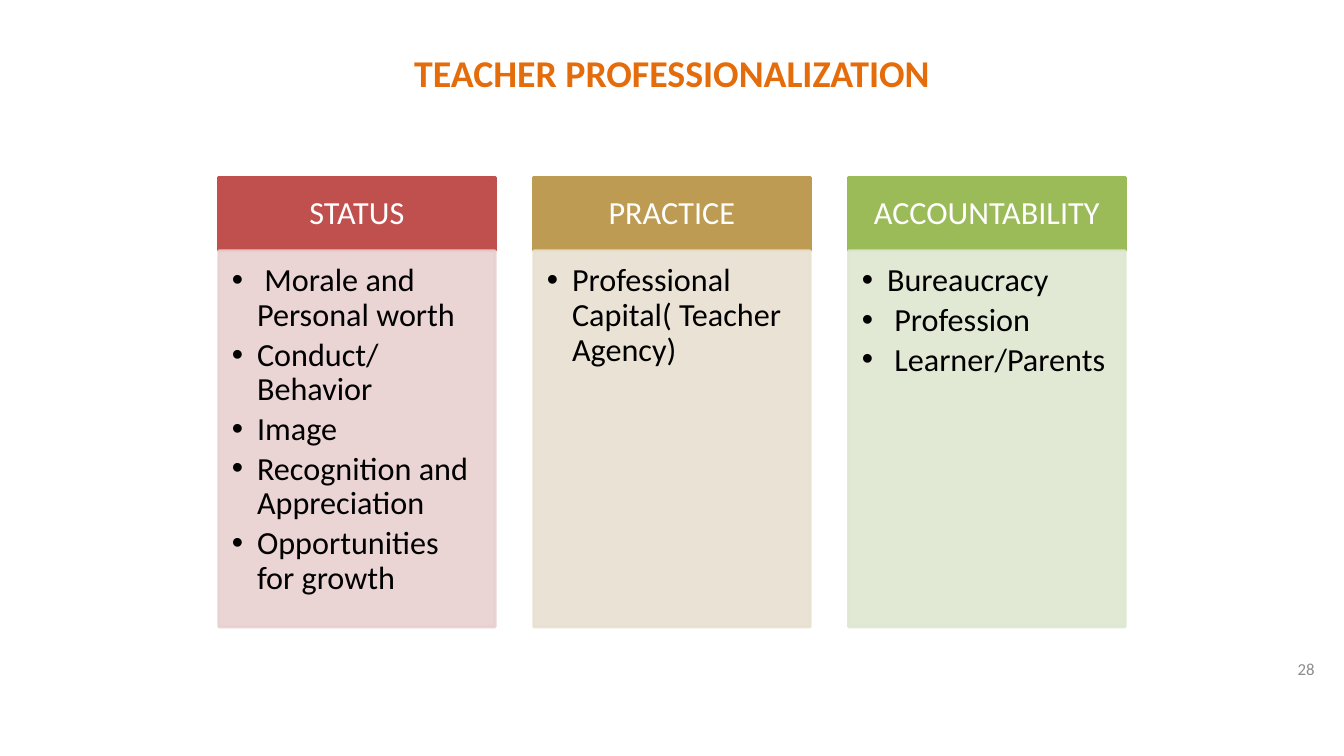
from lxml.etree import SubElement
from pptx import Presentation
from pptx.dml.color import RGBColor
from pptx.enum.shapes import MSO_SHAPE
from pptx.enum.text import MSO_ANCHOR, PP_ALIGN
from pptx.oxml.ns import qn
from pptx.util import Pt

ORANGE = RGBColor(0xE4, 0x6C, 0x0A)
WHITE = RGBColor(0xFF, 0xFF, 0xFF)
BLACK = RGBColor(0x00, 0x00, 0x00)
GRAY = RGBColor(0x8C, 0x8C, 0x8C)
RED = RGBColor(0xC0, 0x50, 0x4D)
PALE_RED = RGBColor(0xE8, 0xD0, 0xD0)
TAN = RGBColor(0xBD, 0x9B, 0x53)
PALE_TAN = RGBColor(0xE8, 0xE1, 0xD1)
GREEN = RGBColor(0x9B, 0xBB, 0x59)
PALE_GREEN = RGBColor(0xDE, 0xE7, 0xD1)

FONT = "Calibri"
HEADER_HEIGHT = 52.3
COLUMN_GAP = 27.5
BULLET_INDENT = 18
COLUMNS = [
    ("STATUS", RED, PALE_RED,
     [" Morale and Personal worth", "Conduct/ Behavior", "Image",
      "Recognition and Appreciation", "Opportunities for growth"]),
    ("PRACTICE", TAN, PALE_TAN, ["Professional Capital( Teacher Agency)"]),
    ("ACCOUNTABILITY", GREEN, PALE_GREEN,
     ["Bureaucracy", " Profession", " Learner/Parents"]),
]


def add_bullet(paragraph):
    properties = paragraph._p.get_or_add_pPr()
    properties.set("marL", str(Pt(BULLET_INDENT)))
    properties.set("indent", str(-Pt(BULLET_INDENT)))
    SubElement(properties, qn("a:buFont"), typeface="Arial")
    SubElement(properties, qn("a:buChar"), char="•")


def write_text(shape, lines, *, size, color, bold=False, align=PP_ALIGN.LEFT,
               anchor=MSO_ANCHOR.TOP, margins=(7.2, 3.6, 7.2, 3.6),
               line_spacing=1.0, space_after=0, bullets=False):
    frame = shape.text_frame
    frame.word_wrap = True
    frame.vertical_anchor = anchor
    (frame.margin_left, frame.margin_top,
     frame.margin_right, frame.margin_bottom) = [Pt(margin) for margin in margins]
    for index, line in enumerate(lines):
        paragraph = frame.paragraphs[0] if index == 0 else frame.add_paragraph()
        paragraph.alignment = align
        paragraph.line_spacing = line_spacing
        paragraph.space_after = Pt(space_after)
        if bullets:
            add_bullet(paragraph)
        run = paragraph.add_run()
        run.text = line
        run.font.name = FONT
        run.font.size = Pt(size)
        run.font.bold = bold
        run.font.color.rgb = color


def add_text_box(slide, text, left, top, width, height, **text_format):
    box = slide.shapes.add_textbox(Pt(left), Pt(top), Pt(width), Pt(height))
    write_text(box, [text], **text_format)


def add_panel(slide, left, top, width, height, color, opacity=100):
    panel = slide.shapes.add_shape(
        MSO_SHAPE.RECTANGLE, Pt(left), Pt(top), Pt(width), Pt(height))
    panel.shadow.inherit = False
    panel.fill.solid()
    panel.fill.fore_color.rgb = color
    panel.line.color.rgb = color
    panel.line.width = Pt(2)
    if opacity < 100:
        for color_element in panel._element.spPr.iter(qn("a:srgbClr")):
            SubElement(color_element, qn("a:alpha"), val=str(opacity * 1000))
    return panel


def add_column(slide, left, top, width, height, heading, color, pale_color, items):
    header = add_panel(slide, left, top, width, HEADER_HEIGHT, color)
    write_text(header, [heading], size=23, color=WHITE, align=PP_ALIGN.CENTER,
               anchor=MSO_ANCHOR.MIDDLE, margins=(13, 7.2, 13, 7.2),
               line_spacing=0.9)
    body = add_panel(slide, left, top + HEADER_HEIGHT, width,
                     height - HEADER_HEIGHT, pale_color, opacity=90)
    write_text(body, items, size=23, color=BLACK, margins=(9.4, 9.4, 13, 14.4),
               line_spacing=0.9, space_after=3.45, bullets=True)


def add_columns(slide, left, top, width, height):
    column_width = (width - COLUMN_GAP * (len(COLUMNS) - 1)) / len(COLUMNS)
    for index, column in enumerate(COLUMNS):
        column_left = left + index * (column_width + COLUMN_GAP)
        add_column(slide, column_left, top, column_width, height, *column)


def main():
    """Build the teacher professionalization slide."""
    presentation = Presentation()
    presentation.slide_width = Pt(960)
    presentation.slide_height = Pt(540)
    slide = presentation.slides.add_slide(presentation.slide_layouts[6])
    add_text_box(slide, "TEACHER PROFESSIONALIZATION", 48, 21.6, 864, 90,
                 size=27, color=ORANGE, bold=True, align=PP_ALIGN.CENTER,
                 margins=(7.2, 14, 7.2, 3.6))
    add_columns(slide, 156.2, 126.9, 647.5, 320.9)
    add_text_box(slide, "28", 722.2, 463, 224, 28.8, size=12, color=GRAY,
                 align=PP_ALIGN.RIGHT, anchor=MSO_ANCHOR.MIDDLE)
    presentation.save("out.pptx")


if __name__ == "__main__":
    main()
